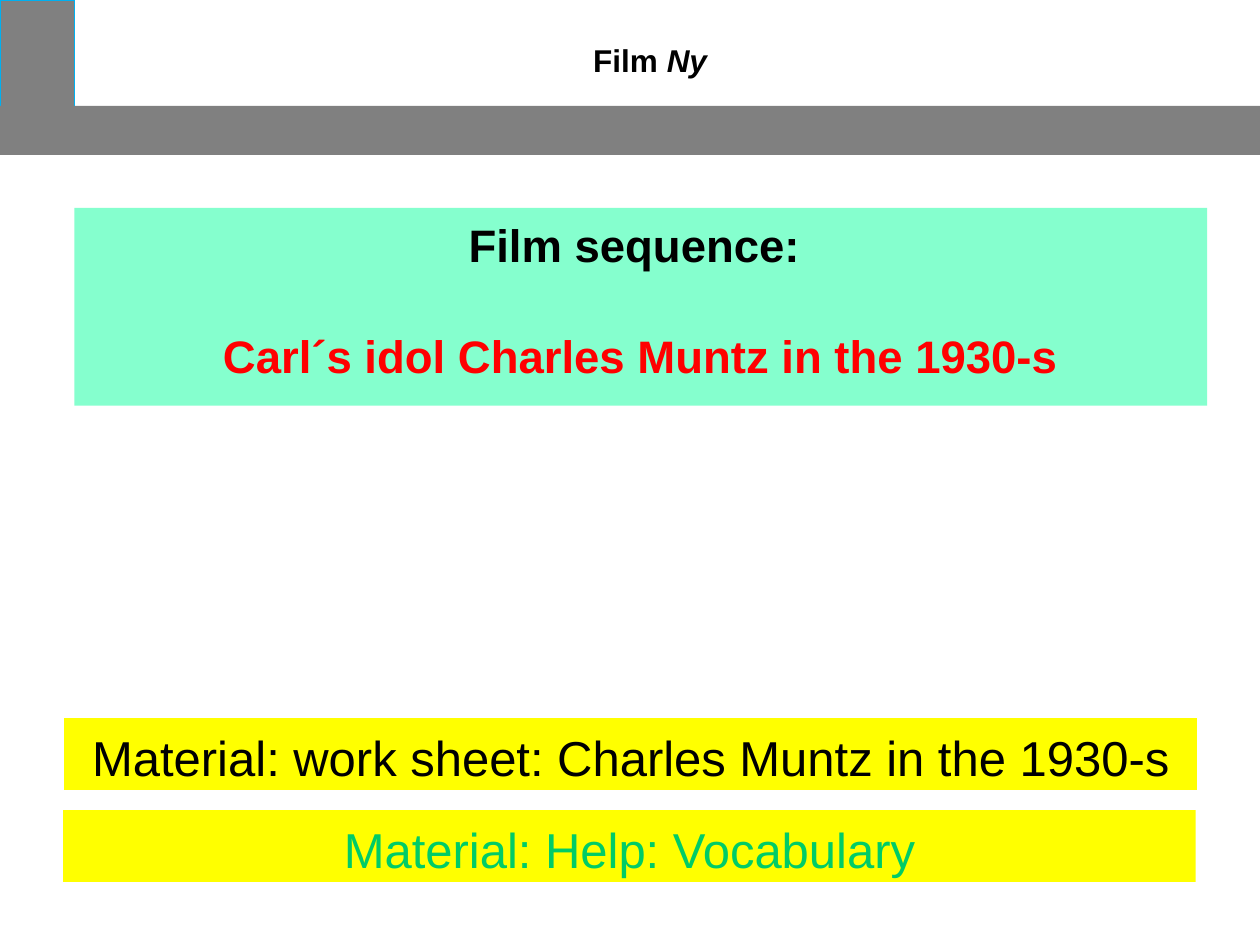
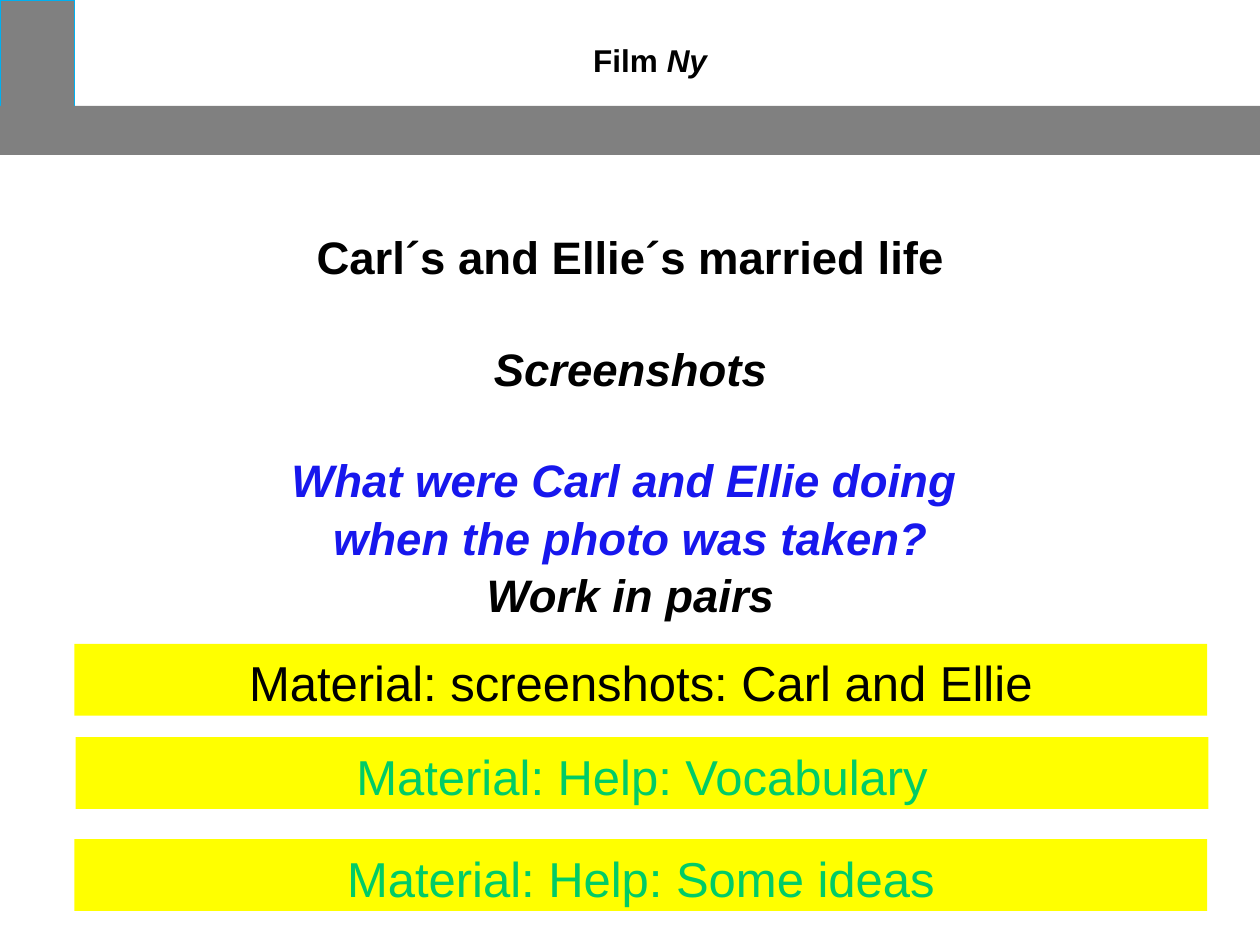
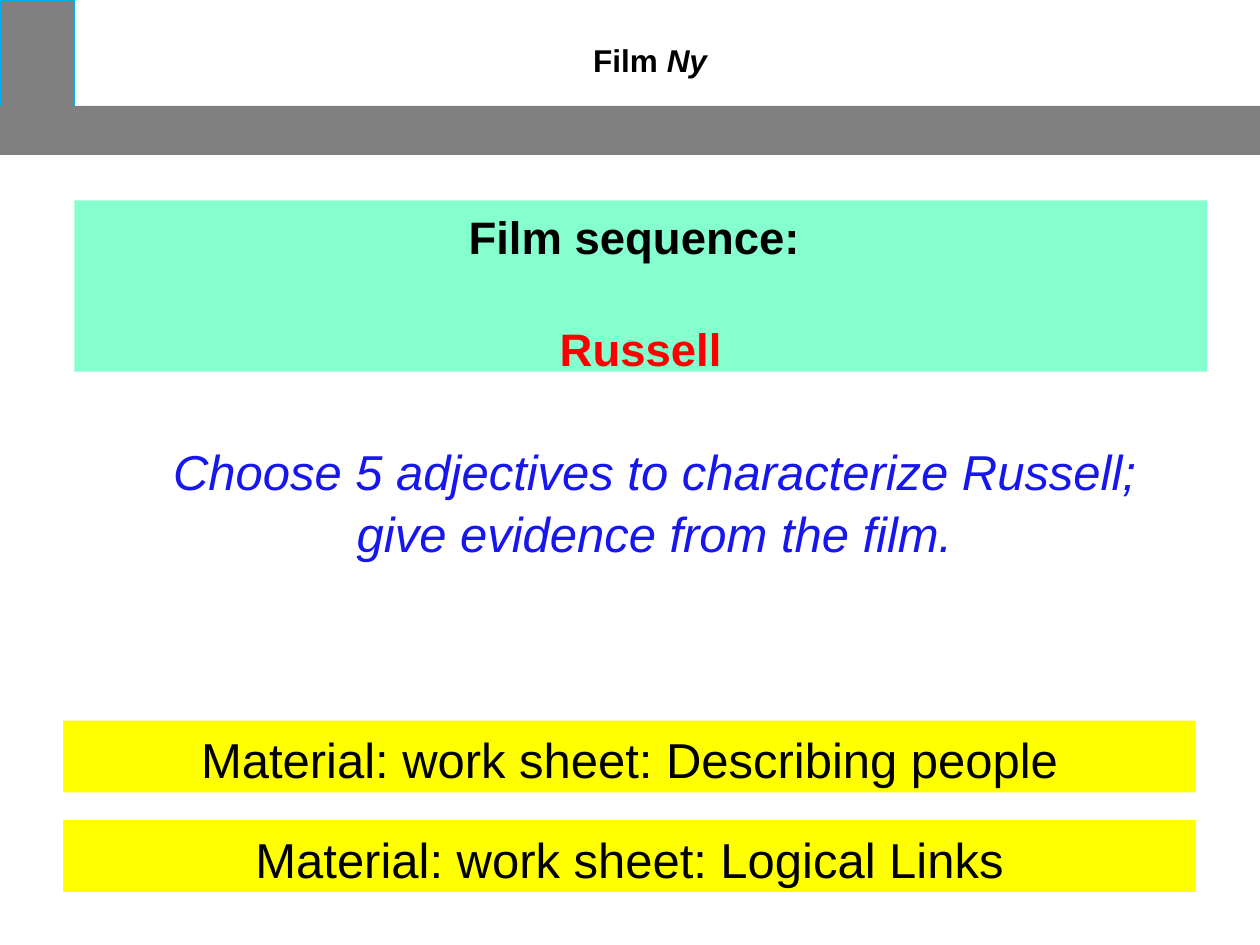
"""Build three lesson slides about the film Ny."""
from pptx import Presentation
from pptx.dml.color import RGBColor
from pptx.enum.shapes import MSO_SHAPE as Shape
from pptx.enum.text import MSO_ANCHOR as Anchor, PP_ALIGN as Align
from pptx.util import Inches, Pt

BLACK, GREY, CYAN, RED = "000000", "808080", "00B0F0", "FF0000"
BLUE, GREEN, YELLOW, MINT = "1717ED", "00CC66", "FFFF00", "85FFCE"
BLANK_LINE = 31
STRIP_WIDTH, STRIP_HEIGHT = 89.9, 7.6

deck = Presentation()
deck.slide_width, deck.slide_height = Inches(10), Inches(7.5)


def paint(target, color):
    """Give a fill a solid colour, or a font or line its colour."""
    if hasattr(target, "solid"):
        target.solid()
        target.fore_color.rgb = RGBColor.from_string(color)
    else:
        target.color.rgb = RGBColor.from_string(color)


def add_box(slide, place, text=(), fill=None, line=None, size=26, bold=True,
            spacing=1.05, top_inset=0.05):
    """Place a box, in percent of the slide, holding (gap, spans) paragraphs."""
    left, top, width, height = place
    area = [int(deck.slide_width * left / 100), int(deck.slide_height * top / 100),
            int(deck.slide_width * width / 100), int(deck.slide_height * height / 100)]
    if fill:
        box = slide.shapes.add_shape(Shape.RECTANGLE, *area)
        box.shadow.inherit = False
        paint(box.fill, fill)
        if line:
            paint(box.line, line)
            box.line.width = Pt(0.75)
        else:
            box.line.fill.background()
    else:
        box = slide.shapes.add_textbox(*area)
    frame = box.text_frame
    frame.word_wrap = True
    frame.vertical_anchor = Anchor.TOP
    frame.margin_top = Inches(top_inset)
    for number, (gap, spans) in enumerate(text):
        para = frame.add_paragraph() if number else frame.paragraphs[0]
        para.alignment = Align.CENTER
        para.line_spacing = spacing
        para.space_before = Pt(gap)
        for words, color, italic in spans:
            span = para.add_run()
            span.text = words
            span.font.name, span.font.size = "Arial", Pt(size)
            span.font.bold, span.font.italic = bold, italic
            paint(span.font, color)


married_life = [
    (0, [("Carl´s and Ellie´s married life", BLACK, False)]),
    (BLANK_LINE, [("Screenshots", BLACK, True)]),
    (BLANK_LINE, [("What were Carl and Ellie doing ", BLUE, True)]),
    (0, [("when the photo was taken?", BLUE, True)]),
    (0, [("Work in pairs", BLACK, True)]),
]
adjectives = [(0, [("Choose 5 adjectives to characterize Russell; "
                    "give evidence from the film.", BLUE, True)])]

lessons = [
    {"sequence": ("Carl´s idol Charles Muntz in the 1930-s", 22, 20.93),
     "strips": [(5.1, 76, "Material: work sheet: Charles Muntz in the 1930-s", BLACK),
                (5, 85.73, "Material: Help: Vocabulary", GREEN)]},
    {"task": {"place": (6.9, 23.33, 86.3, 60.4), "text": married_life},
     "strips": [(5.9, 68.13, "Material: screenshots: Carl and Ellie", BLACK),
                (6, 78, "Material: Help: Vocabulary", GREEN),
                (5.9, 88.8, "Material: Help: Some ideas", GREEN)]},
    {"sequence": ("Russell", 21.2, 18.13),
     "task": {"place": (8.8, 40, 86.3, 36.13), "text": adjectives,
              "size": 28, "bold": False, "top_inset": 0.48},
     "strips": [(5, 76.27, "Material: work sheet: Describing people", BLACK),
                (5, 86.8, "Material: work sheet: Logical Links", BLACK)]},
]

for lesson in lessons:
    page = deck.slides.add_slide(deck.slide_layouts[6])
    add_box(page, (0, 0, 5.9, 12.13), fill=GREY, line=CYAN)
    add_box(page, (9.8, 3.73, 84.3, 5.2), size=18, spacing=1.0,
            text=[(0, [("Film ", BLACK, False), ("Ny ", BLACK, True)])])
    add_box(page, (0, 11.2, 100, 5.2), fill=GREY)
    if "task" in lesson:
        add_box(page, **lesson["task"])
    if "sequence" in lesson:
        topic, top, height = lesson["sequence"]
        add_box(page, (5.9, top, STRIP_WIDTH, height), fill=MINT,
                text=[(0, [("Film sequence: ", BLACK, False)]),
                      (BLANK_LINE, [(topic, RED, False)])])
    for left, top, material, color in lesson["strips"]:
        add_box(page, (left, top, STRIP_WIDTH, STRIP_HEIGHT), fill=YELLOW,
                size=28, bold=False, text=[(0, [(material, color, False)])])

deck.save("out.pptx")
